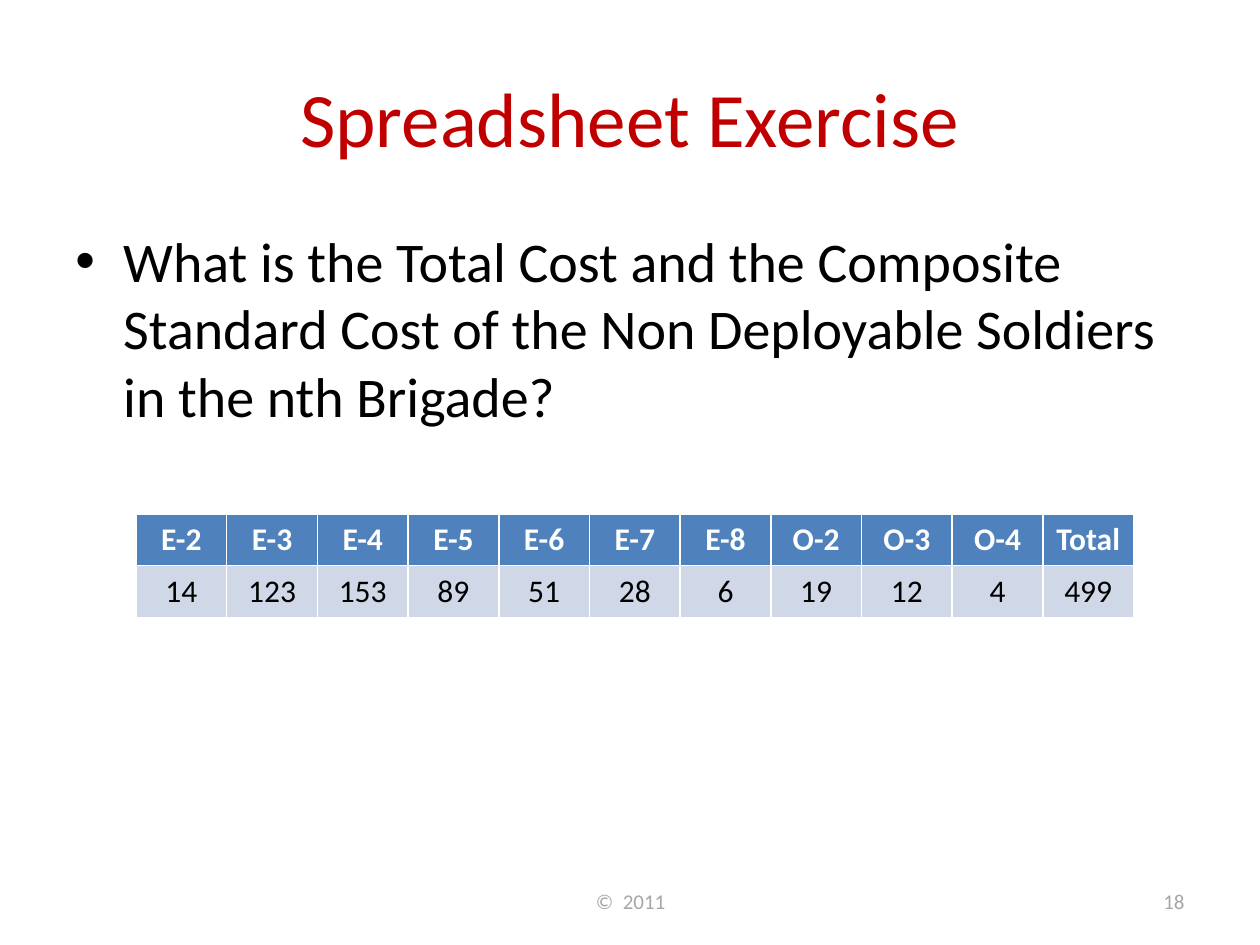
from lxml import etree
from pptx import Presentation
from pptx.dml.color import RGBColor
from pptx.enum.text import MSO_ANCHOR as ANCHOR, PP_ALIGN as ALIGN
from pptx.oxml.ns import qn
from pptx.util import Inches, Pt

COLORS = {
    "title": "C00000",
    "text": "000000",
    "footer": "A6A6A6",
    "header_text": "FFFFFF",
    "header_fill": "4F81BD",
    "count_fill": "D0D8E8",
}
GRADES = ["E-2", "E-3", "E-4", "E-5", "E-6", "E-7", "E-8", "O-2", "O-3", "O-4", "Total"]
SOLDIERS = [14, 123, 153, 89, 51, 28, 6, 19, 12, 4, 499]


def write(frame, text, size=18, color="text", bold=False, align=ALIGN.CENTER, anchor=None):
    frame.word_wrap = True
    if anchor is not None:
        frame.vertical_anchor = anchor
    paragraph = frame.paragraphs[0]
    paragraph.alignment = align
    run = paragraph.add_run()
    run.text = text
    run.font.name = "Calibri"
    run.font.size = Pt(size)
    run.font.bold = bold
    run.font.color.rgb = RGBColor.from_string(COLORS[color])
    return paragraph


prs = Presentation()
prs.slide_width, prs.slide_height = Inches(10), Inches(7.5)
slide = prs.slides.add_slide(prs.slide_layouts[6])
margin = 0.5
content_width = 10 - 2 * margin


def text_area(left, top, width, height):
    box = slide.shapes.add_textbox(Inches(left), Inches(top), Inches(width), Inches(height))
    return box.text_frame


# Title
write(text_area(margin, 0.3, content_width, 1.25), "Spreadsheet Exercise",
      size=44, color="title", anchor=ANCHOR.MIDDLE)

# Question with a hanging bullet
question = write(
    text_area(margin, 1.75, content_width, 4.95),
    "What is the Total Cost and the Composite Standard Cost of the "
    "Non Deployable Soldiers in the nth Brigade?",
    size=32, align=ALIGN.LEFT, anchor=ANCHOR.TOP)
question.space_before = Pt(0.2 * 32)
bullet_format = question._p.get_or_add_pPr()
bullet_format.set("marL", str(Inches(0.38)))
bullet_format.set("indent", str(-Inches(0.38)))
etree.SubElement(bullet_format, qn("a:buFont")).set("typeface", "Arial")
etree.SubElement(bullet_format, qn("a:buChar")).set("char", "•")

# Soldiers by grade; the default table style draws the white borders
column_width, row_height = 0.72, 0.41
grades_table = slide.shapes.add_table(
    2, len(GRADES), Inches(1.08), Inches(4.08),
    Inches(column_width * len(GRADES)), Inches(2 * row_height)).table
for row in grades_table.rows:
    row.height = Inches(row_height)
for col, (grade, count) in enumerate(zip(GRADES, SOLDIERS)):
    grades_table.columns[col].width = Inches(column_width)
    for row, (text, color, fill) in enumerate([
            (grade, "header_text", "header_fill"), (str(count), "text", "count_fill")]):
        cell = grades_table.cell(row, col)
        cell.fill.solid()
        cell.fill.fore_color.rgb = RGBColor.from_string(COLORS[fill])
        write(cell.text_frame, text, color=color, bold=row == 0)

# Footer and page number
for text, left, width, align in [("©  2011", 3.42, 3.17, ALIGN.CENTER),
                                 ("18", 7.17, 2.33, ALIGN.RIGHT)]:
    write(text_area(left, 6.95, width, 0.4), text,
          size=12, color="footer", align=align, anchor=ANCHOR.MIDDLE)

prs.save("out.pptx")
